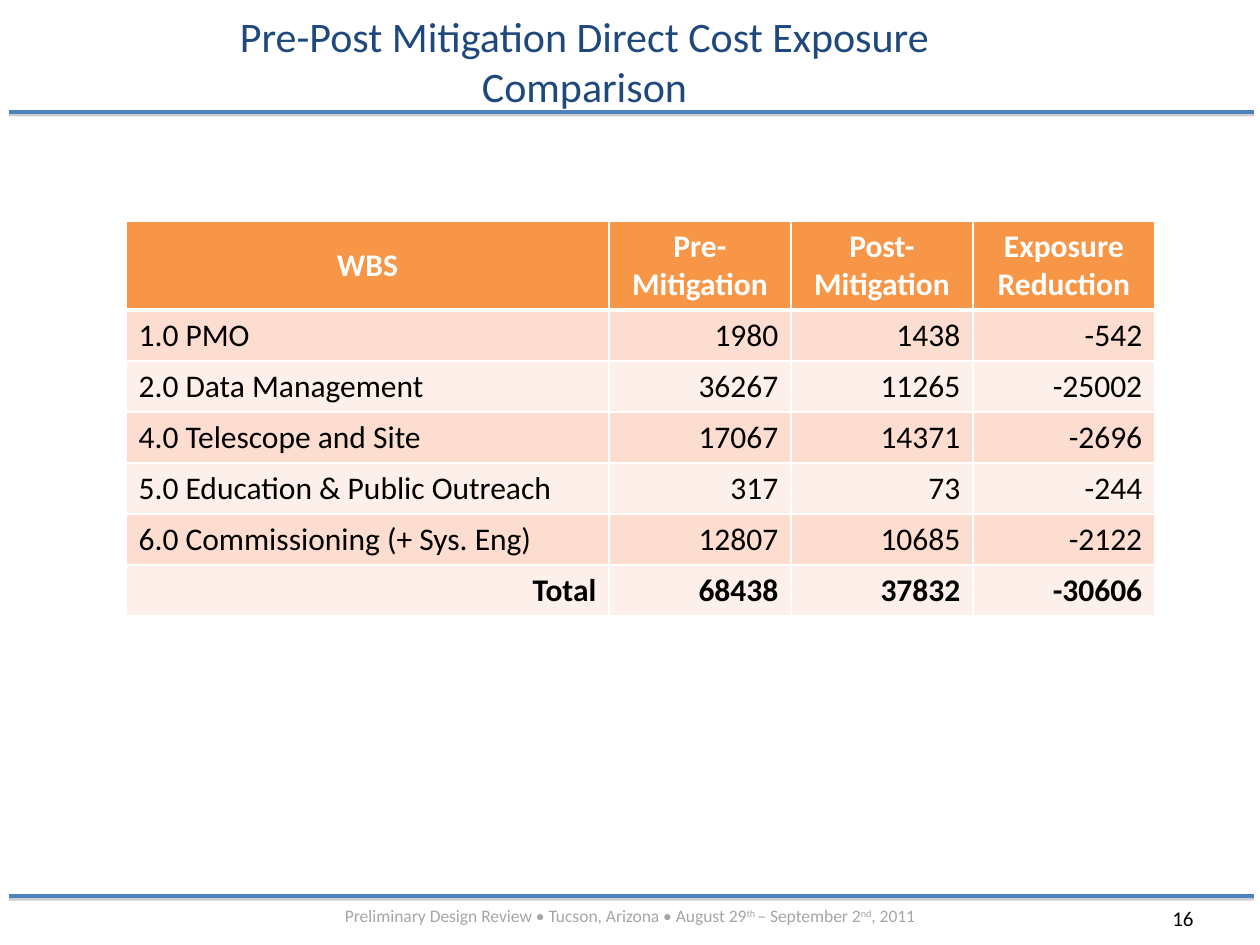
from dataclasses import dataclass

from lxml.etree import SubElement
from pptx import Presentation
from pptx.dml.color import RGBColor
from pptx.enum.shapes import MSO_CONNECTOR
from pptx.enum.text import MSO_ANCHOR, PP_ALIGN
from pptx.oxml.ns import qn
from pptx.util import Pt

EMU_PER_PX = 914400 / 126


@dataclass(frozen=True)
class Theme:
    font: str = "Calibri"
    title: str = "1F497D"
    rule: str = "4F81BD"
    shadow: str = "808080"
    footer: str = "A6A6A6"
    text: str = "000000"
    white: str = "FFFFFF"
    header: str = "F79646"
    bands: tuple = ("FCDDCF", "FDEFE9")
    title_size: int = 24
    table_size: int = 18
    number_size: int = 12
    footer_size: int = 10


THEME = Theme()
HEADINGS = ("WBS", "Pre-Mitigation", "Post-Mitigation", "Exposure Reduction")
COSTS = (
    ("1.0 PMO", 1980, 1438, -542),
    ("2.0 Data Management", 36267, 11265, -25002),
    ("4.0 Telescope and Site", 17067, 14371, -2696),
    ("5.0 Education & Public Outreach", 317, 73, -244),
    ("6.0 Commissioning (+ Sys. Eng)", 12807, 10685, -2122),
    ("Total", 68438, 37832, -30606),
)
FOOTER_RUNS = (
    ("Preliminary Design Review • Tucson, Arizona • August 29", False),
    ("th ", True),
    ("– September 2", False),
    ("nd", True),
    (", 2011", False),
)


def px(length):
    return round(length * EMU_PER_PX)


def add_run(paragraph, text, size, color, bold=False, superscript=False):
    run = paragraph.add_run()
    run.text = text
    run.font.name = THEME.font
    run.font.size = Pt(size)
    run.font.bold = bold
    run.font.color.rgb = RGBColor.from_string(color)
    if superscript:
        run._r.get_or_add_rPr().set("baseline", "30000")


def add_text(slide, box, runs, size, color, align=PP_ALIGN.LEFT, anchor=MSO_ANCHOR.TOP):
    """Place one paragraph made of (text, superscript) runs."""
    frame = slide.shapes.add_textbox(*map(px, box)).text_frame
    frame.word_wrap = True
    frame.vertical_anchor = anchor
    paragraph = frame.paragraphs[0]
    paragraph.alignment = align
    for text, superscript in runs:
        add_run(paragraph, text, size, color, superscript=superscript)


def add_rule(slide, left, right, y):
    """Draw a horizontal rule with a soft grey shadow below it."""
    rule = slide.shapes.add_connector(
        MSO_CONNECTOR.STRAIGHT, px(right), px(y), px(left), px(y))
    rule.line.color.rgb = RGBColor.from_string(THEME.rule)
    rule.line.width = Pt(2)
    effects = SubElement(rule._element.spPr, qn("a:effectLst"))
    shadow = SubElement(effects, qn("a:outerShdw"), blurRad="0",
                        dist=str(Pt(1.6)), dir="5400000", rotWithShape="0")
    color = SubElement(shadow, qn("a:srgbClr"), val=THEME.shadow)
    SubElement(color, qn("a:alpha"), val="38000")


def add_borders(cell, top=1, bottom=1):
    properties = cell._tc.get_or_add_tcPr()
    for side, points in (("L", 1), ("R", 1), ("T", top), ("B", bottom)):
        line = SubElement(properties, qn(f"a:ln{side}"), w=str(Pt(points)))
        fill = SubElement(line, qn("a:solidFill"))
        SubElement(fill, qn("a:srgbClr"), val=THEME.white)


def fill_cell(cell, text, fill, color, align, bold):
    cell.fill.solid()
    cell.fill.fore_color.rgb = RGBColor.from_string(fill)
    paragraph = cell.text_frame.paragraphs[0]
    paragraph.alignment = align
    add_run(paragraph, text, THEME.table_size, color, bold)


def add_cost_table(slide, box):
    left, top, width, height = box
    row_height = 51
    number_width = 182
    rows = (HEADINGS, *COSTS)
    table = slide.shapes.add_table(
        len(rows), len(HEADINGS), *map(px, box)).table
    for index, column in enumerate(table.columns):
        column.width = px(number_width if index else width - 3 * number_width)
    for index, row in enumerate(table.rows):
        row.height = px(row_height if index else height - len(COSTS) * row_height)

    for row_index, values in enumerate(rows):
        is_header = row_index == 0
        is_total = row_index == len(COSTS)
        for column_index, value in enumerate(values):
            cell = table.cell(row_index, column_index)
            add_borders(cell, top=3 if row_index == 1 else 1,
                        bottom=3 if is_header else 1)
            if is_header:
                cell.vertical_anchor = MSO_ANCHOR.MIDDLE
                fill_cell(cell, value, THEME.header, THEME.white,
                          PP_ALIGN.CENTER, True)
            else:
                align = PP_ALIGN.RIGHT if column_index or is_total else PP_ALIGN.LEFT
                fill_cell(cell, str(value), THEME.bands[(row_index - 1) % 2],
                          THEME.text, align, is_total)


def add_title(slide, box):
    add_text(slide, box, [("Pre-Post Mitigation Direct Cost Exposure Comparison", False)],
             THEME.title_size, THEME.title, PP_ALIGN.CENTER, MSO_ANCHOR.MIDDLE)


def add_footer(slide, box):
    left, top, width, height = box
    add_text(slide, (left + 1097, top, 78, 38), [("16", False)],
             THEME.number_size, THEME.text)
    add_text(slide, (left, top, width, height), FOOTER_RUNS,
             THEME.footer_size, THEME.footer, PP_ALIGN.CENTER)


def main():
    presentation = Presentation()
    presentation.slide_width = px(1260)
    presentation.slide_height = px(945)
    slide = presentation.slides.add_slide(presentation.slide_layouts[6])
    for y in (112, 896):
        add_rule(slide, 9, 1254, y)
    add_footer(slide, (63, 899, 1134, 34))
    add_title(slide, (158, 22, 853, 77))
    add_cost_table(slide, (126, 221, 1029, 395))
    presentation.save("out.pptx")


if __name__ == "__main__":
    main()
